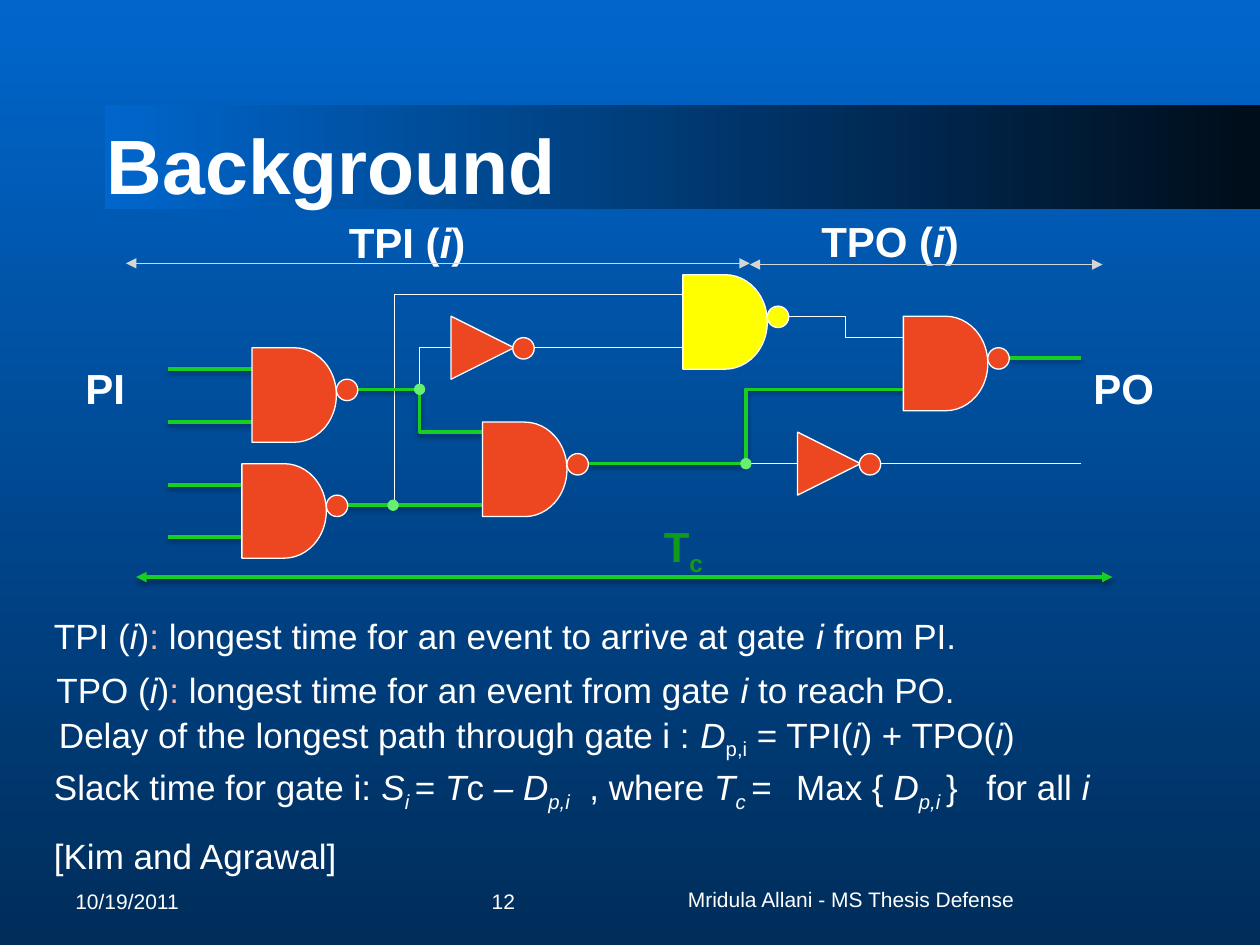
from lxml import etree
from pptx import Presentation
from pptx import util as u
from pptx.dml.color import RGBColor
from pptx.enum import shapes, text
from pptx.oxml import ns

WHITE, RED, YELLOW = "FFFFFF", "ED4722", "FFFF00"
GREEN, DARK, NODE, GREY, PINK = "16CE24", "119A1B", "66EF71", "D5D5D5", "F4B1AB"
KIND = shapes.MSO_SHAPE


def rgb(code):
    return RGBColor.from_string(code)


def sub(parent, tag, **attrs):
    item = etree.SubElement(parent, ns.qn(tag))
    for key, value in attrs.items():
        item.set(key, str(value))
    return item


def blend(fill, first, last, angle):
    fill.gradient()
    fill.gradient_angle = angle
    for stop, code, place in zip(fill.gradient_stops, (first, last), (0, 1)):
        stop.color.rgb = rgb(code)
        stop.position = place


class Deck:
    font = "Arial"

    def __init__(self, slide):
        self.slide = slide

    def shape(self, kind, x, y, w, h, fill=None, line=None, rot=0):
        item = self.slide.shapes.add_shape(kind, *map(u.Inches, (x, y, w, h)))
        item.shadow.inherit = False
        item.rotation = rot
        if fill:
            item.fill.solid()
            item.fill.fore_color.rgb = rgb(fill)
        if line:
            item.line.color.rgb = rgb(line)
            item.line.width = u.Pt(0.75)
        else:
            item.line.fill.background()
        return item

    def bubble(self, x, y, fill):
        self.shape(KIND.OVAL, x, y, 0.17, 0.17, fill, WHITE)

    def gate(self, x, y, fill=RED):
        self.shape(KIND.FLOWCHART_DELAY, x, y, 0.67, 0.75, fill, WHITE)
        self.bubble(x + 0.67, y + 0.25, fill)

    def invert(self, x, y):
        self.shape(KIND.ISOSCELES_TRIANGLE, x, y, 0.5, 0.5, RED, WHITE, 90)
        self.bubble(x + 0.49, y + 0.17, RED)

    def node(self, x, y):
        self.shape(KIND.FLOWCHART_CONNECTOR, x - 0.04, y - 0.04, 0.08, 0.08, NODE, NODE)

    def wire(self, x1, y1, x2, y2, color=WHITE, turn=None, heads=False):
        """Draw a wire; turn is the x at which a bent one changes height."""
        types = shapes.MSO_CONNECTOR
        item = self.slide.shapes.add_connector(
            types.ELBOW if turn else types.STRAIGHT,
            *map(u.Inches, (x1, y1, x2, y2)))
        thick = color == GREEN
        item.line.color.rgb = rgb(color)
        item.line.width = u.Pt(2 if thick else 0.75)
        props = item._element.spPr
        if turn:
            guides = props.find(ns.qn("a:prstGeom")).get_or_add_avLst()
            part = round((turn - x1) / (x2 - x1) * 100000)
            sub(guides, "a:gd", name="adj1", fmla=f"val {part}")
        if heads:
            for end in ("a:headEnd", "a:tailEnd"):
                sub(props.get_or_add_ln(), end, type="triangle")
        glow = sub(props, "a:effectLst")
        if thick:
            shade = sub(glow, "a:outerShdw", blurRad=u.Pt(3.1), dist=u.Pt(1.6),
                        dir=5400000, rotWithShape=0)
            black = sub(shade, "a:srgbClr", val="000000")
            sub(black, "a:alpha", val=38000)

    def label(self, x, y, w, h, *lines, size=20, color=WHITE, bold=False,
              mid=False, center=False, wrap=True, tabs=()):
        """Each line is a list of (words, marks); marks: i italic, s subscript, p pink."""
        box = self.slide.shapes.add_textbox(*map(u.Inches, (x, y, w, h)))
        frame = box.text_frame
        frame.word_wrap = wrap
        if mid:
            frame.vertical_anchor = text.MSO_ANCHOR.MIDDLE
        for n, line in enumerate(lines):
            para = frame.add_paragraph() if n else frame.paragraphs[0]
            if n:
                para.space_before = u.Pt(12)
            if center:
                para.alignment = text.PP_ALIGN.CENTER
            if tabs:
                stops = sub(para._p.get_or_add_pPr(), "a:tabLst")
                for place in tabs:
                    sub(stops, "a:tab", pos=u.Inches(place), algn="l")
            for words, marks in line:
                run = para.add_run()
                run.text = words
                font = run.font
                font.name, font.size = self.font, u.Pt(size)
                font.bold, font.italic = bold, "i" in marks
                font.color.rgb = rgb(PINK if "p" in marks else color)
                if "s" in marks:
                    run._r.get_or_add_rPr().set("baseline", "-25000")


def main():
    prs = Presentation()
    prs.slide_width, prs.slide_height = u.Inches(10), u.Inches(7.5)
    slide = prs.slides.add_slide(prs.slide_layouts[6])
    deck = Deck(slide)

    # Background, banner and title
    blend(slide.background.fill, "0066CC", "002D5A", 270)
    banner = deck.shape(KIND.RECTANGLE, 0.83, 0.83, 9.17, 0.83)
    blend(banner.fill, "0066CC", "000D1A", 0)
    deck.label(0.75, 0.67, 8.5, 1.25, [("Background", "")], size=44, bold=True, mid=True)

    # Definitions
    for x, y, name, middle, end in (
            (0.33, 4.83, "TPI", "to arrive at gate ", " from PI."),
            (0.35, 5.26, "TPO", "from gate ", " to reach PO.")):
        deck.label(x, y, 9.4, 0.44, [
            (name + " (", ""), ("i", "i"), (")", ""), (": ", "p"),
            ("longest time for an event " + middle, ""), ("i", "i"), (end, "")])
    deck.label(0.37, 5.61, 9.63, 0.44, [
        ("Delay of the longest path through gate i : ", ""), ("D", "i"), ("p,i", "s"),
        (" = TPI(", ""), ("i", "i"), (") + TPO(", ""), ("i", "i"), (")", "")])
    deck.label(0.33, 6.03, 9.17, 0.94, [
        ("Slack time for gate i: ", ""), ("S", "i"), ("i ", "is"), ("= ", ""),
        ("T", "i"), ("c ", ""), ("– D", "i"), ("p,i", "is"), ("\t, where ", ""),
        ("T", "i"), ("c ", "is"), ("=\tMax { ", ""), ("D", "i"), ("p,i ", "is"),
        ("}\tfor all ", ""), ("i", "i")],
        [("[Kim and Agrawal]", "")], tabs=(4.25, 5.89, 7.4))

    # Footer
    deck.label(0.5, 6.95, 2.33, 0.4, [("10/19/2011", "")], size=12, mid=True)
    deck.label(2.83, 6.95, 2.33, 0.4, [("12", "")], size=12, mid=True, center=True)
    deck.label(5.17, 6.92, 3.17, 0.44, [("Mridula Allani - MS Thesis Defense", "")],
               size=12, mid=True, center=True)

    # Circuit labels
    for x, y, w, name in ((2.67, 1.67, 1.33, "TPI ("), (6.42, 1.66, 1.67, "TPO (")):
        deck.label(x, y, w, 0.5, [(name, ""), ("i", "i"), (")", "")], size=24, bold=True)
    for x, w, name in ((0.58, 0.53, "PI"), (8.58, 0.69, "PO")):
        deck.label(x, 2.83, w, 0.5, [(name, "")], size=24, bold=True, wrap=False)
    deck.label(5.17, 4.08, 0.67, 0.5, [("T", ""), ("c", "s")],
               size=24, color=DARK, bold=True)

    # Time spans
    deck.wire(1, 2.09, 5.95, 2.09, GREY, heads=True)
    deck.wire(5.95, 2.1, 8.75, 2.1, GREY, heads=True)
    deck.wire(1.08, 4.58, 8.83, 4.58, GREEN, heads=True)

    # Thin wires
    deck.wire(2.83, 3.09, 3.58, 2.76, turn=3.33)
    deck.wire(2.75, 4.01, 5.42, 2.34, turn=3.13)
    deck.wire(6.25, 2.51, 7.17, 2.68, turn=6.71)
    deck.wire(5.92, 3.68, 6.33, 3.68)
    deck.wire(6.98, 3.68, 8.58, 3.68)
    deck.wire(4.23, 2.76, 5.42, 2.76)

    # Longest path wires
    for y, end in ((2.93, 2), (3.35, 2), (3.85, 1.92), (4.26, 1.92)):
        deck.wire(1.33, y, end, y, GREEN)
    deck.wire(2.83, 3.09, 3.83, 3.43, GREEN, turn=3.33)
    deck.wire(4.67, 3.68, 7.17, 3.09, GREEN, turn=5.92)
    deck.wire(2.75, 4.01, 3.83, 4.01, GREEN)
    deck.wire(8, 2.84, 8.58, 2.84, GREEN)

    # Gates and junctions
    for x, y in ((2, 2.76), (1.92, 3.68), (3.83, 3.35), (7.17, 2.51)):
        deck.gate(x, y)
    deck.gate(5.42, 2.18, YELLOW)
    deck.invert(3.58, 2.51)
    deck.invert(6.33, 3.43)
    for x, y in ((5.92, 3.68), (3.33, 3.09), (3.12, 4.01)):
        deck.node(x, y)

    prs.save("out.pptx")


if __name__ == "__main__":
    main()
